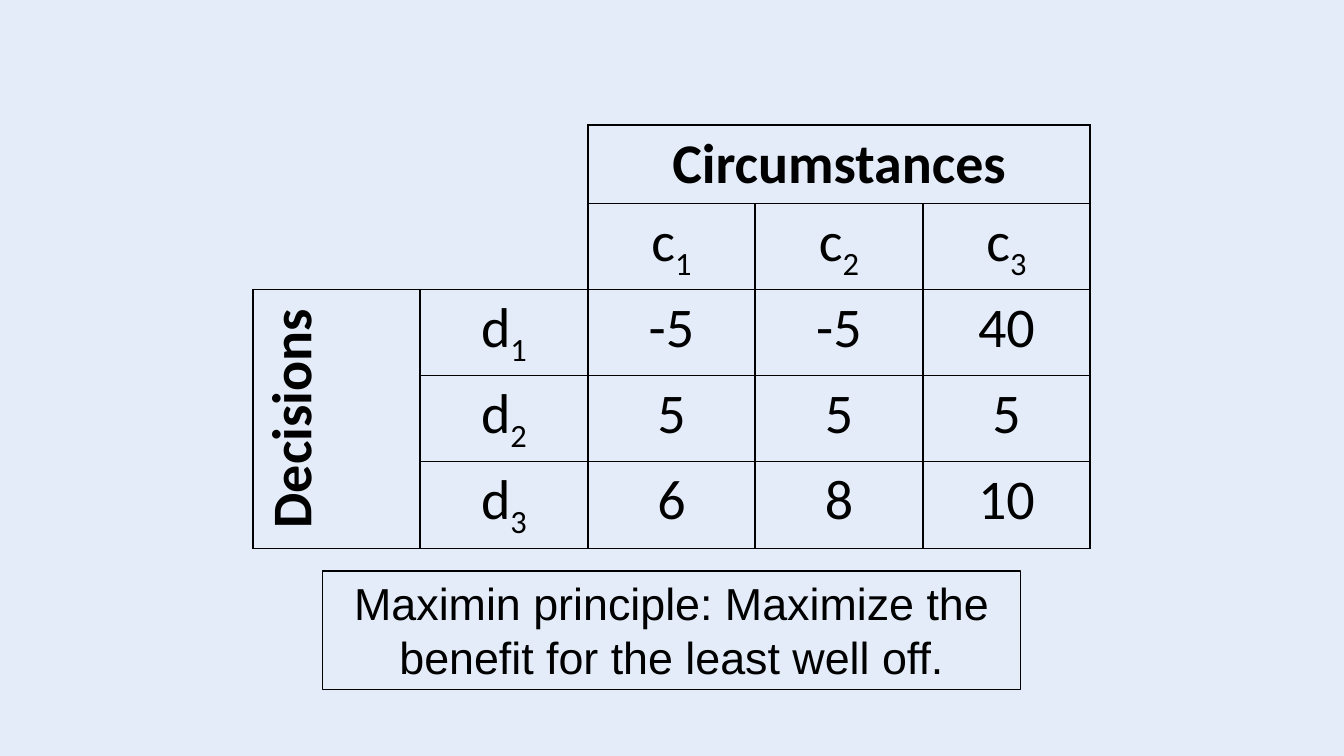
from lxml.etree import SubElement
from pptx import Presentation
from pptx.dml.color import RGBColor
from pptx.enum.shapes import MSO_SHAPE
from pptx.enum.text import MSO_ANCHOR, PP_ALIGN
from pptx.oxml import parse_xml
from pptx.oxml.ns import nsdecls, qn
from pptx.util import Pt

PX = 12192000 / 1344
BLACK = RGBColor(0x00, 0x00, 0x00)
PALE_BLUE = RGBColor(0xE3, 0xEC, 0xF8)
SIDES = "LRTB"
COL_WIDTHS = [167, 168, 167, 168, 167]
ROW_HEIGHTS = [78, 86, 86, 86, 87]
PAYOFFS = [["-5", "-5", "40"], ["5", "5", "5"], ["6", "8", "10"]]


def px(n):
    return round(n * PX)


def format_run(r, font, size, bold=False):
    r.font.name = font
    r.font.size = Pt(size)
    r.font.bold = bold
    r.font.color.rgb = BLACK


def set_borders(cell, sides):
    tcPr = cell._tc.get_or_add_tcPr()
    for i, side in enumerate(SIDES):
        ln = parse_xml(f'<a:ln{side} {nsdecls("a")} w="12700"/>')
        if side in sides:
            fill = SubElement(ln, qn("a:solidFill"))
            SubElement(fill, qn("a:srgbClr"), val=str(BLACK))
        else:
            SubElement(ln, qn("a:noFill"))
        tcPr.insert(i, ln)


def write_cell(cell, text, subscript="", bold=False):
    p = cell.text_frame.paragraphs[0]
    p.text = text
    p.alignment = PP_ALIGN.CENTER
    if subscript:
        r = p.add_run()
        r.text = subscript
        r._r.get_or_add_rPr().set("baseline", "-25000")
    for r in p.runs:
        format_run(r, "Calibri", 40, bold)


def blank_corner_sides(row, col):
    return ("R" if col == 1 else "") + ("B" if row == 1 else "")


def add_payoff_table(s):
    frame = s.shapes.add_table(5, 5, px(253), px(125), px(sum(COL_WIDTHS)), px(sum(ROW_HEIGHTS)))
    table = frame.table
    table.first_row = False
    table.horz_banding = False
    for col, width in zip(table.columns, COL_WIDTHS):
        col.width = px(width)
    for row, height in zip(table.rows, ROW_HEIGHTS):
        row.height = px(height)
    for row in range(5):
        for col in range(5):
            cell = table.cell(row, col)
            cell.fill.background()
            corner = row < 2 and col < 2
            set_borders(cell, blank_corner_sides(row, col) if corner else SIDES)

    circumstances = table.cell(0, 2)
    circumstances.merge(table.cell(0, 4))
    write_cell(circumstances, "Circumstances", bold=True)
    decisions = table.cell(2, 0)
    decisions.merge(table.cell(4, 0))
    write_cell(decisions, "Decisions", bold=True)
    decisions.vertical_anchor = MSO_ANCHOR.MIDDLE
    decisions._tc.get_or_add_tcPr().set("vert", "vert270")

    for i, payoffs in enumerate(PAYOFFS):
        write_cell(table.cell(1, i + 2), "c", str(i + 1))
        write_cell(table.cell(i + 2, 1), "d", str(i + 1))
        for j, payoff in enumerate(payoffs):
            write_cell(table.cell(i + 2, j + 2), payoff)


def add_caption(s, text):
    sp = s.shapes.add_shape(MSO_SHAPE.RECTANGLE, px(323), px(571), px(698), px(119))
    sp.shadow.inherit = False
    sp.fill.background()
    sp.line.color.rgb = BLACK
    sp.line.width = Pt(0.75)
    tf = sp.text_frame
    tf.word_wrap = True
    tf.vertical_anchor = MSO_ANCHOR.TOP
    p = tf.paragraphs[0]
    p.text = text
    p.alignment = PP_ALIGN.CENTER
    format_run(p.runs[0], "Arial", 32)


def main():
    prs = Presentation()
    prs.slide_width = px(1344)
    prs.slide_height = px(756)
    s = prs.slides.add_slide(prs.slide_layouts[6])
    s.background.fill.solid()
    s.background.fill.fore_color.rgb = PALE_BLUE
    add_caption(s, "Maximin principle: Maximize the benefit for the least well off.")
    add_payoff_table(s)
    prs.save("out.pptx")


if __name__ == "__main__":
    main()
